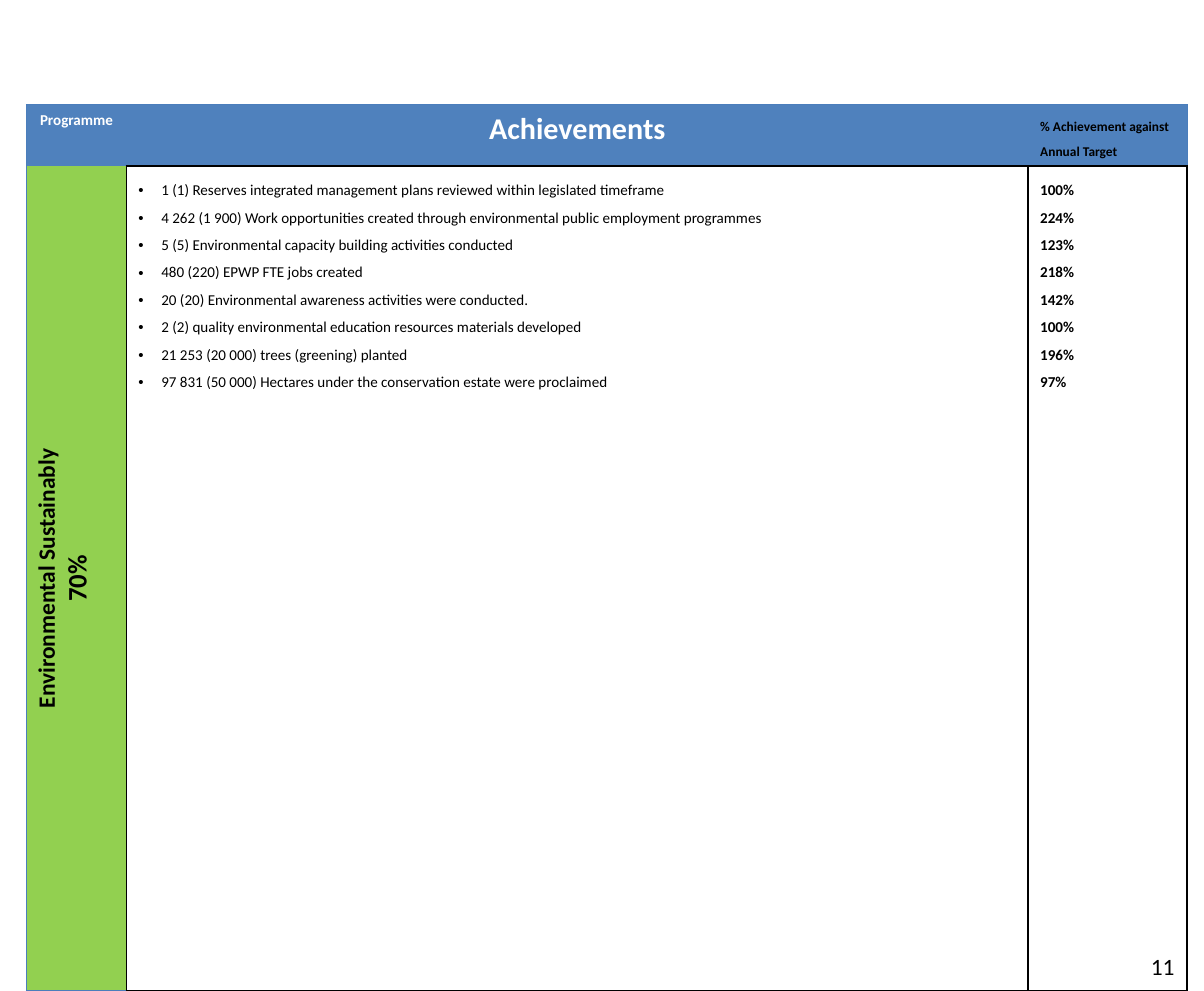
from dataclasses import dataclass

from lxml.etree import SubElement
from pptx import Presentation
from pptx.dml.color import RGBColor
from pptx.enum.text import PP_ALIGN
from pptx.oxml.ns import qn
from pptx.util import Inches, Pt


@dataclass(frozen=True)
class Theme:
    """Colours, type sizes and font of the slide."""
    font: str = "Calibri"
    black: str = "000000"
    white: str = "FFFFFF"
    header: str = "4F81BD"
    edge: str = "4B7EBC"
    programme: str = "92D050"
    small: int = 8
    body: int = 9
    label: int = 14
    score: int = 16
    heading: int = 18


THEME = Theme()
GRID = (THEME.black, 1)
EDGE = (THEME.edge, 0.75)
ACHIEVEMENTS = [
    ("1 (1) Reserves integrated management plans reviewed within legislated timeframe", "100%"),
    ("4 262 (1 900) Work opportunities created through environmental public employment programmes", "224%"),
    ("5 (5) Environmental capacity building activities conducted", "123%"),
    ("480 (220) EPWP FTE jobs created", "218%"),
    ("20 (20) Environmental awareness activities were conducted.", "142%"),
    ("2 (2) quality environmental education resources materials developed", "100%"),
    ("21 253 (20 000) trees (greening) planted", "196%"),
    ("97 831 (50 000) Hectares under the conservation estate were proclaimed", "97%"),
]


def write(paragraph, text, size=THEME.body, color=THEME.black, bold=False,
          align=PP_ALIGN.LEFT, spacing=1.0, bullet=False):
    """Put formatted text in a paragraph."""
    if bullet:
        properties = paragraph._p.get_or_add_pPr()
        properties.set("marL", str(Inches(0.19)))
        properties.set("indent", str(-Inches(0.19)))
        SubElement(properties, qn("a:buFont")).set("typeface", "Arial")
        SubElement(properties, qn("a:buChar")).set("char", "•")
    paragraph.alignment = align
    paragraph.line_spacing = spacing
    run = paragraph.add_run()
    run.text = text
    run.font.name = THEME.font
    run.font.size = Pt(size)
    run.font.bold = bold
    run.font.color.rgb = RGBColor.from_string(color)


class SlideBuilder:
    """Holds the theme and the current slide."""

    def __init__(self, slide, theme):
        self.slide = slide
        self.theme = theme

    def lines(self, frame, texts, **style):
        """Write one paragraph per text, after any text already there."""
        for text in texts:
            first = frame.paragraphs[0]
            write(frame.add_paragraph() if first.runs else first, text, **style)

    def table(self, left, top, widths, heights):
        """Add a plain table with the given column widths and row heights."""
        frame = self.slide.shapes.add_table(
            len(heights), len(widths), Inches(left), Inches(top),
            Inches(sum(widths)), Inches(sum(heights)))
        table = frame.table
        table.first_row = table.horz_banding = False
        for column, width in zip(table.columns, widths):
            column.width = Inches(width)
        for row, height in zip(table.rows, heights):
            row.height = Inches(height)
        return table

    def cell(self, cell, fill, **borders):
        """Set the fill and the L, R, T and B borders of a cell."""
        properties = cell._tc.get_or_add_tcPr()
        for side in "LRTB":
            line = SubElement(properties, qn(f"a:ln{side}"))
            if side in borders:
                color, width = borders[side]
                line.set("w", str(Pt(width)))
                solid = SubElement(line, qn("a:solidFill"))
                SubElement(solid, qn("a:srgbClr")).set("val", color)
            else:
                SubElement(line, qn("a:noFill"))
        cell.fill.solid()
        cell.fill.fore_color.rgb = RGBColor.from_string(fill)
        return cell.text_frame

    def text(self, left, top, width, height, text, **style):
        """Add a wrapping text box."""
        box = self.slide.shapes.add_textbox(
            Inches(left), Inches(top), Inches(width), Inches(height))
        box.text_frame.word_wrap = True
        self.lines(box.text_frame, [text], **style)


def main():
    """Build and save the achievements slide."""
    deck = Presentation()
    deck.slide_width, deck.slide_height = Inches(10), Inches(8.23)
    builder = SlideBuilder(deck.slides.add_slide(deck.slide_layouts[6]), THEME)
    table = builder.table(0.22, 0.87, [0.83, 7.49, 1.32], [0.47, 6.85])
    center = {"align": PP_ALIGN.CENTER, "bold": True}

    programme_head = builder.cell(table.cell(0, 0), THEME.header, L=EDGE, T=EDGE)
    builder.lines(programme_head, ["Programme"], color=THEME.white, **center)
    achievements_head = builder.cell(table.cell(0, 1), THEME.header, T=EDGE, B=GRID)
    builder.lines(achievements_head, ["Achievements"], size=THEME.heading,
                  color=THEME.white, **center)
    target_head = builder.cell(table.cell(0, 2), THEME.header, T=EDGE, R=EDGE, B=GRID)
    builder.lines(target_head, ["% Achievement against Annual Target"],
                  size=THEME.small, bold=True, spacing=1.5)

    programme = builder.cell(table.cell(1, 0), THEME.programme,
                             L=EDGE, T=EDGE, R=GRID, B=EDGE)
    table.cell(1, 0)._tc.get_or_add_tcPr().set("vert", "vert270")
    builder.lines(programme, ["Environmental Sustainably"], size=THEME.label, **center)
    builder.lines(programme, ["70%"], size=THEME.score, **center)

    results, percentages = zip(*ACHIEVEMENTS)
    all_sides = dict.fromkeys("LRTB", GRID)
    results_body = builder.cell(table.cell(1, 1), THEME.white, **all_sides)
    builder.lines(results_body, results, spacing=1.5, bullet=True)
    percentages_body = builder.cell(table.cell(1, 2), THEME.white, **all_sides)
    builder.lines(percentages_body, percentages, spacing=1.5, bold=True)

    builder.text(9.46, 7.86, 0.5, 0.44, "11", size=THEME.label)
    deck.save("out.pptx")


if __name__ == "__main__":
    main()
